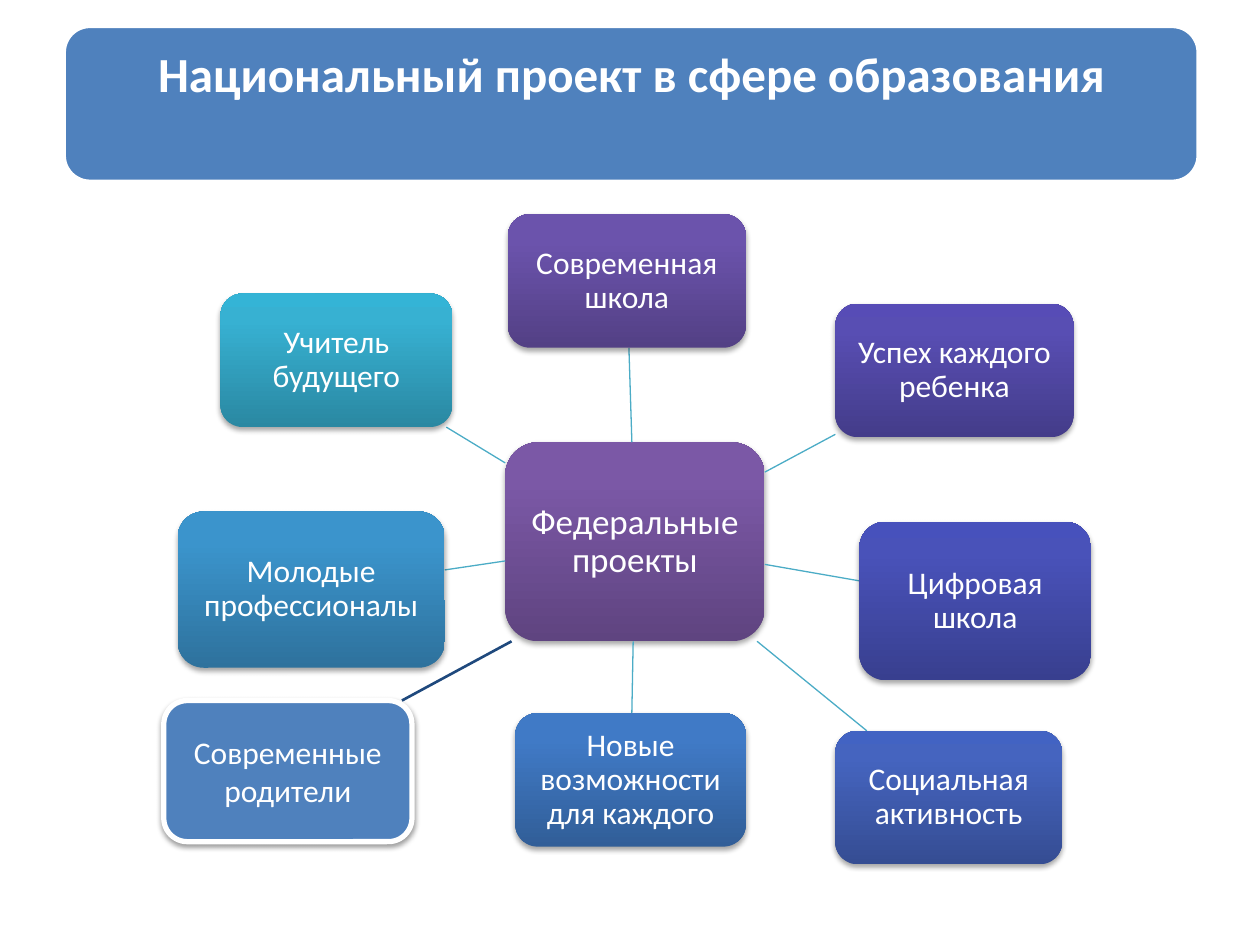
from collections import namedtuple

from lxml import etree
from pptx import Presentation
from pptx.dml.color import RGBColor
from pptx.enum.shapes import MSO_CONNECTOR as CONN, MSO_SHAPE as SHAPE
from pptx.enum.text import MSO_ANCHOR as ANCHOR, PP_ALIGN as ALIGN
from pptx.oxml.ns import qn
from pptx.util import Emu, Inches, Pt

Box = namedtuple("Box", "x y w h")

# Slide grid: 100 columns by 75 rows
COLS, ROWS = 100, 75
WIDTH, HEIGHT = Inches(10), Inches(7.5)
TITLE_BOX = Box(5.1, 2.1, 90, 12.3)
DIAGRAM_BOX = Box(13, 17, 74, 52)

COLORS = {"white": "FFFFFF", "blue": "4F81BD", "navy": "1F497D",
          "spoke": "4BACC6", "shadow": "000000"}

# Boxes are relative to the diagram; gradients run from bottom to top
HUB = ("Федеральные проекты", Box(27.1, 18.1, 20.6, 15.8),
       ("5F4480", "7B58A6", "7C57A8"))
PROJECTS = [
    ("Современная школа", Box(27.3, 0, 18.9, 10.6),
     ("534085", "6B53AC", "6B52AF")),
    ("Успех каждого ребенка", Box(53.3, 7.1, 18.9, 10.6),
     ("443C8A", "584EB3", "574CB6")),
    ("Цифровая школа", Box(55.2, 24.4, 18.4, 12.6),
     ("383F8F", "4952B9", "4751BC")),
    ("Социальная активность", Box(53.3, 41, 18, 10.6),
     ("354D93", "4564BF", "4263C3")),
    ("Новые возможности для каждого", Box(27.9, 39.6, 18.3, 10.6),
     ("315E98", "407AC6", "3E7AC9")),
    ("Молодые профессионалы", Box(1.1, 23.6, 21.2, 12.4),
     ("2E729D", "3B94CC", "3995CF")),
    ("Учитель будущего", Box(4.5, 6.3, 18.4, 10.6),
     ("2A88A2", "37B1D2", "34B4D6")),
]
PARENTS = ("Современные родители", Box(0, 38.6, 19.7, 11.2))
PARENTS_LINE = ((27.6, 33.9), (18.9, 38.6))


def col(n):
    return Emu(round(WIDTH * n / COLS))


def row(n):
    return Emu(round(HEIGHT * n / ROWS))


def rgb(name):
    return RGBColor.from_string(COLORS.get(name, name))


def within(area, box):
    return Box(area.x + box.x, area.y + box.y, box.w, box.h)


def add_text(s, text, size=18, bold=False, anchor=ANCHOR.MIDDLE,
             spacing=0.9, side=0.06, top=0.1):
    tf = s.text_frame
    tf.word_wrap = True
    tf.vertical_anchor = anchor
    tf.margin_left = tf.margin_right = Inches(side)
    tf.margin_top = tf.margin_bottom = Inches(top)
    p = tf.paragraphs[0]
    p.alignment = ALIGN.CENTER
    p.line_spacing = spacing
    r = p.add_run()
    r.text = text
    r.font.name = "Calibri"
    r.font.size = Pt(size)
    r.font.bold = bold
    r.font.color.rgb = rgb("white")


def add_gradient(s, colors):
    s.fill.gradient()
    s.fill.gradient_angle = 90
    stops = s._element.spPr.find(qn("a:gradFill")).find(qn("a:gsLst"))
    for old in list(stops):
        stops.remove(old)
    for pos, color in zip((0, 80, 100), colors):
        gs = etree.SubElement(stops, qn("a:gs"), pos=str(pos * 1000))
        etree.SubElement(gs, qn("a:srgbClr"), val=color)


def add_shadow(s, alpha=35):
    effects = s._element.spPr.find(qn("a:effectLst"))
    shadow = etree.SubElement(
        effects, qn("a:outerShdw"), blurRad=str(Pt(3.1)), dist=str(Pt(1.8)),
        dir="5400000", rotWithShape="0")
    color = etree.SubElement(shadow, qn("a:srgbClr"), val=COLORS["shadow"])
    etree.SubElement(color, qn("a:alpha"), val=str(alpha * 1000))


def add_card(slide, box, fill="blue", gradient=None, line_width=0):
    s = slide.shapes.add_shape(SHAPE.ROUNDED_RECTANGLE, col(box.x),
                               row(box.y), col(box.w), row(box.h))
    s.shadow.inherit = False
    if gradient:
        add_gradient(s, gradient)
    else:
        s.fill.solid()
        s.fill.fore_color.rgb = rgb(fill)
    if line_width:
        s.line.color.rgb = rgb("white")
        s.line.width = Pt(line_width)
    else:
        s.line.fill.background()
    return s


def add_line(slide, start, end, color="spoke", width=0.75):
    c = slide.shapes.add_connector(CONN.STRAIGHT, col(start[0]), row(start[1]),
                                   col(end[0]), row(end[1]))
    c.line.color.rgb = rgb(color)
    c.line.width = Pt(width)
    etree.SubElement(c._element.spPr, qn("a:effectLst"))


def center(box):
    return box.x + box.w / 2, box.y + box.h / 2


def edge_point(box, target):
    """Where the line from the box centre to the target leaves the box."""
    x, y = center(box)
    dx, dy = target[0] - x, target[1] - y
    t = 1 / max(abs(dx) * 2 / box.w, abs(dy) * 2 / box.h)
    return x + dx * t, y + dy * t


def build_title(slide, box):
    s = add_card(slide, box, line_width=2)
    add_text(s, "Национальный проект в сфере образования", size=28, bold=True,
             anchor=ANCHOR.TOP, top=0.13)


def build_diagram(slide, area):
    # Hub
    text, box, gradient = HUB
    hub = within(area, box)
    s = add_card(slide, hub, gradient=gradient)
    add_shadow(s)
    add_text(s, text, size=20)

    # Projects, each on a spoke aimed from centre to centre
    for text, box, gradient in PROJECTS:
        node = within(area, box)
        add_line(slide, edge_point(hub, center(node)),
                 edge_point(node, center(hub)))
        s = add_card(slide, node, gradient=gradient)
        add_shadow(s)
        add_text(s, text)

    # Parents card with its heavier line
    text, box = PARENTS
    s = add_card(slide, within(area, box), line_width=3)
    add_shadow(s, alpha=38)
    add_text(s, text, spacing=1.0)
    start, end = [(area.x + x, area.y + y) for x, y in PARENTS_LINE]
    add_line(slide, start, end, color="navy", width=1.5)


def main():
    prs = Presentation()
    prs.slide_width, prs.slide_height = WIDTH, HEIGHT
    slide = prs.slides.add_slide(prs.slide_layouts[6])
    build_title(slide, TITLE_BOX)
    build_diagram(slide, DIAGRAM_BOX)
    prs.save("out.pptx")


if __name__ == "__main__":
    main()
